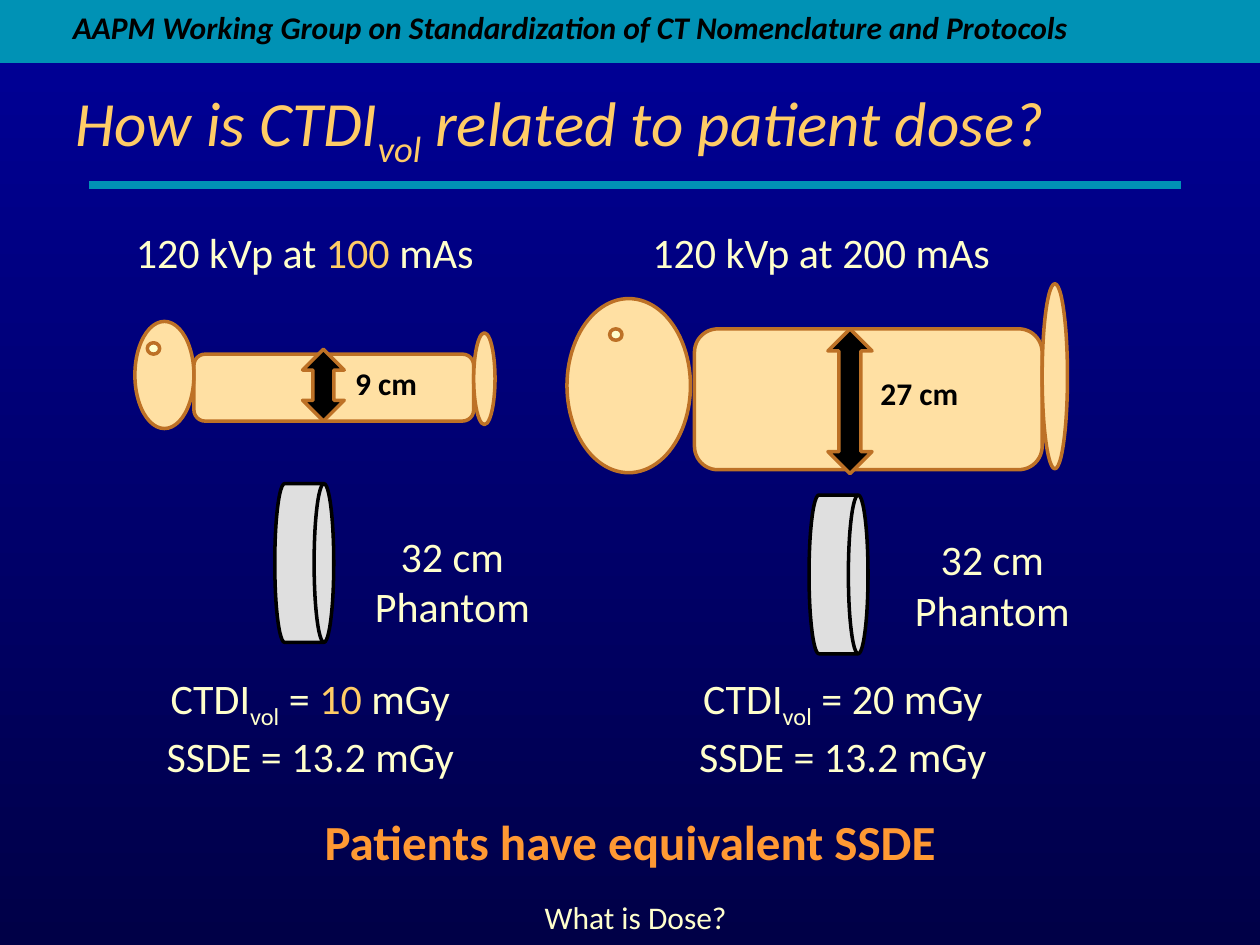
"""Builds a slide that compares CTDIvol and SSDE for a small and a large patient."""
from pptx import Presentation
from pptx import util as u
from pptx.dml.color import RGBColor
from pptx.enum import shapes, text
from pptx.oxml import parse_xml
from pptx.oxml.ns import nsdecls

COLORS = {
    "night": "000099", "deep": "000047", "teal": "0092B5", "cream": "FFFFCC",
    "gold": "FFCC66", "orange": "FF9933", "skin": "FFE0A3", "outline": "BD7126",
    "grey": "DFDFDF", "black": "000000",
}
SHAPE = shapes.MSO_SHAPE
LEFT, CENTER = text.PP_ALIGN.LEFT, text.PP_ALIGN.CENTER
SUB = {"baseline": -25000}
GOLD = {"color": "gold"}


class SlideBuilder:
    def __init__(self):
        self.deck = Presentation()
        self.deck.slide_width, self.deck.slide_height = u.Cm(25.4), u.Cm(19.05)
        self.slide = self.deck.slides.add_slide(self.deck.slide_layouts[1])
        self.style = {"name": "Calibri", "size": 24, "color": "cream",
                      "bold": False, "italic": False}

    def rgb(self, key):
        return RGBColor.from_string(COLORS[key])

    def background(self, top, bottom):
        fill = self.slide.background.fill
        fill.gradient()
        fill.gradient_angle = 270
        for stop, color, position in zip(fill.gradient_stops, (top, bottom), (0, 1)):
            stop.color.rgb = self.rgb(color)
            stop.position = position

    def shape(self, kind, place, fill, line=None):
        part = self.slide.shapes.add_shape(kind, *map(u.Cm, place))
        part.shadow.inherit = False
        part.fill.solid()
        part.fill.fore_color.rgb = self.rgb(fill)
        if line:
            part.line.color.rgb = self.rgb(line)
            part.line.width = u.Pt(2)
        else:
            part.line.fill.background()

    def rule(self, left, right, height, color):
        line = self.slide.shapes.add_connector(
            shapes.MSO_CONNECTOR.STRAIGHT, *map(u.Cm, (left, height, right, height)))
        line.line.color.rgb = self.rgb(color)
        line.line.width = u.Pt(4.5)
        line._element.spPr.append(parse_xml(f"<a:effectLst {nsdecls('a')}/>"))

    def fill_text(self, frame, paragraphs, align, **changes):
        for number, runs in enumerate(paragraphs):
            paragraph = frame.add_paragraph() if number else frame.paragraphs[0]
            paragraph.alignment = align
            paragraph.space_before = u.Pt(0)
            for words, own in runs:
                run = paragraph.add_run()
                run.text = words
                look = {**self.style, **changes, **own}
                look["size"] = u.Pt(look["size"])
                run.font.color.rgb = self.rgb(look.pop("color"))
                if "baseline" in look:
                    run._r.get_or_add_rPr().set("baseline", str(look.pop("baseline")))
                for name, value in look.items():
                    setattr(run.font, name, value)

    def label(self, place, paragraphs, align=LEFT, wrap=True, **changes):
        frame = self.slide.shapes.add_textbox(*map(u.Cm, place)).text_frame
        frame.word_wrap = wrap
        self.fill_text(frame, paragraphs, align, **changes)

    def placeholder(self, index, place, paragraphs, align, anchor, **changes):
        holder = self.slide.placeholders[index]
        for name, value in zip(("left", "top", "width", "height"), place):
            setattr(holder, name, u.Cm(value))
        frame = holder.text_frame
        frame.auto_size = text.MSO_AUTO_SIZE.NONE
        frame.vertical_anchor = anchor
        if index:
            properties = frame.paragraphs[0]._p.get_or_add_pPr()
            properties.set("marL", "0")
            properties.set("indent", "0")
            properties.append(parse_xml(f"<a:buNone {nsdecls('a')}/>"))
        self.fill_text(frame, paragraphs, align, **changes)

    def patient(self, case):
        for part, kind, fill, line in (
            ("body", SHAPE.ROUNDED_RECTANGLE, "skin", "outline"),
            ("head", SHAPE.OVAL, "skin", "outline"),
            ("eye", SHAPE.OVAL, "cream", "outline"),
            ("feet", SHAPE.OVAL, "skin", "outline"),
            ("phantom", SHAPE.FLOWCHART_DIRECT_ACCESS_STORAGE, "grey", "black"),
            ("arrow", SHAPE.UP_DOWN_ARROW, "black", "outline"),
        ):
            self.shape(kind, case[part], fill, line)
        number, emphasis = case["mas"]
        self.label(case["technique_at"], [
            [("120 kVp at ", {}), (number, emphasis), (" mAs", {})]])
        self.label(case["thickness_at"], [[(case["thickness"], {})]],
                   size=18, color="black", bold=True)
        self.label(case["phantom_at"], [[("32 cm Phantom", {})]], CENTER)
        number, emphasis = case["ctdi"]
        self.label(case["dose_at"], [
            [("CTDI", {}), ("vol", SUB), (" = ", {}), (number, emphasis), (" mGy", {})],
            [("SSDE = 13.2 mGy", {})]], CENTER)


PATIENTS = [
    {"body": (3.91, 7.14, 5.64, 1.35), "head": (2.72, 6.48, 1.19, 2.16),
     "eye": (2.97, 6.91, 0.25, 0.23), "feet": (9.55, 6.71, 0.43, 1.85),
     "phantom": (5.54, 9.75, 1.19, 3.2), "arrow": (6.1, 7.04, 0.84, 1.45),
     "technique_at": (2.49, 4.45, 7.7, 1.27), "mas": ("100", GOLD),
     "thickness_at": (6.91, 7.21, 3, 1.02), "thickness": "9 cm",
     "phantom_at": (6.91, 10.57, 4.42, 2.31),
     "dose_at": (1.3, 13.44, 9.91, 2.31), "ctdi": ("10", GOLD)},
    {"body": (14, 6.63, 7.01, 2.84), "head": (11.43, 6.02, 2.49, 3.51),
     "eye": (12.29, 6.63, 0.25, 0.23), "feet": (21.01, 5.72, 0.51, 3.73),
     "phantom": (16.31, 9.98, 1.19, 3.2), "arrow": (16.69, 6.63, 0.89, 2.92),
     "technique_at": (12.9, 4.45, 8.1, 1.27), "mas": ("200", {}),
     "thickness_at": (17.5, 7.42, 3, 1.02), "thickness": "27 cm",
     "phantom_at": (17.91, 10.64, 4.19, 2.31),
     "dose_at": (10.49, 13.44, 13, 2.31), "ctdi": ("20", {})},
]


def main():
    page = SlideBuilder()
    page.background("night", "deep")
    page.shape(SHAPE.RECTANGLE, (0, 0, 25.4, 1.27), "teal")
    page.label((1.22, 0.03, 21.23, 1.02), [[(
        "AAPM Working Group on Standardization of CT Nomenclature and Protocols", {})]],
        wrap=False, size=18, color="black", bold=True, italic=True)
    page.rule(1.8, 23.8, 3.73, "teal")
    page.placeholder(0, (1.27, 1.63, 22.86, 1.91), [[
        ("How is CTDI", {}), ("vol", SUB), (" related to patient dose?", {})]],
        LEFT, text.MSO_ANCHOR.BOTTOM, size=36, color="gold", italic=True)
    for case in PATIENTS:
        page.patient(case)
    page.placeholder(1, (1.27, 16.23, 22.86, 2.01), [[
        ("Patients have equivalent SSDE", {})]],
        CENTER, text.MSO_ANCHOR.TOP, size=28, color="orange", bold=True)
    page.label((8.05, 17.98, 9.53, 1.07), [[("What is Dose?", {})]], CENTER, size=18)
    page.deck.save("out.pptx")


if __name__ == "__main__":
    main()
